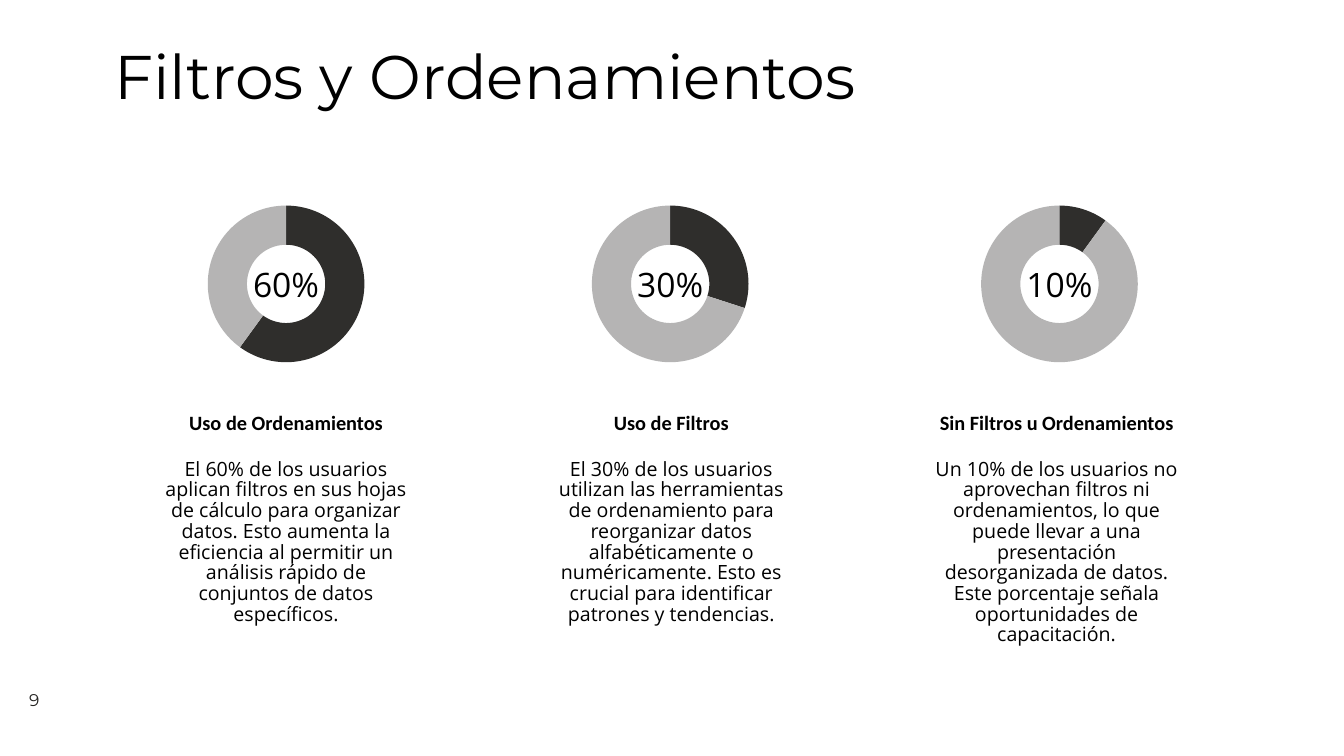
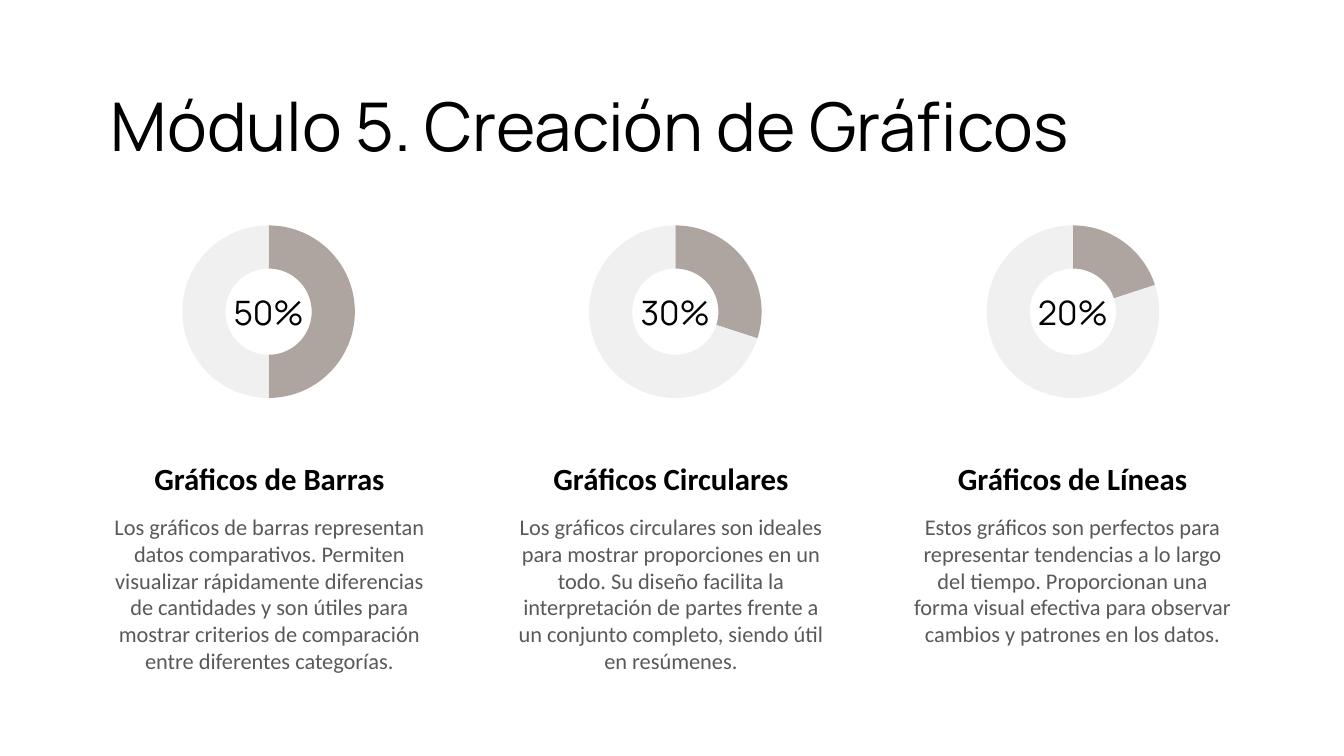
from pptx import Presentation
from pptx.chart.data import CategoryChartData
from pptx.dml.color import RGBColor
from pptx.enum import chart as chart_enum, text
from pptx.util import Cm, Pt

BLACK = RGBColor(0x00, 0x00, 0x00)
CHARCOAL = RGBColor(0x23, 0x22, 0x20)
DARK = RGBColor(0x2F, 0x2E, 0x2C)
SILVER = RGBColor(0xB5, 0xB4, 0xB4)
TAUPE = RGBColor(0xAF, 0xA5, 0xA0)
PALE = RGBColor(0xF0, 0xF0, 0xF0)
GRAY = RGBColor(0x59, 0x59, 0x59)
OUTLINE = RGBColor(0xF9, 0xF9, 0xF9)

TITLE_ONLY = 5
PERCENT_SIZE = (2.54, 1.27)

# Lengths are centimetres; a box is (left, top, width, height).
# A font is (name, points, colour, bold).
SLIDES = [
    {
        "title": "Filtros y Ordenamientos",
        "title_box": (2.62, 0.84, 28.6, 2.36),
        "title_font": ("Montserrat", 44, BLACK, False),
        "number": "9",
        "ring_colors": (DARK, SILVER),
        "ring_centres": (7.21, 16.89, 26.7),
        "ring_top": 4.83,
        "ring_size": (5.69, 4.65),
        "percent_font": ("Open Sans", 24, BLACK, False),
        "first_centre": 7.21,
        "column_step": 9.71,
        "column_width": 6.63,
        "heading_top": 9.78,
        "heading_height": 1.3,
        "heading_font": ("Calibri", 14.5, BLACK, True),
        "body_top": 11.46,
        "body_height": 6.63,
        "body_font": ("Open Sans", 14, BLACK, False),
        "body_spacing": 0.88,
        "columns": [
            (60, "Uso de Ordenamientos",
             "El 60% de los usuarios aplican filtros en sus hojas de cálculo "
             "para organizar datos. Esto aumenta la eficiencia al permitir un "
             "análisis rápido de conjuntos de datos específicos."),
            (30, "Uso de Filtros",
             "El 30% de los usuarios utilizan las herramientas de "
             "ordenamiento para reorganizar datos alfabéticamente o "
             "numéricamente. Esto es crucial para identificar patrones y "
             "tendencias."),
            (10, "Sin Filtros u Ordenamientos",
             "Un 10% de los usuarios no aprovechan filtros ni ordenamientos, "
             "lo que puede llevar a una presentación desorganizada de datos. "
             "Este porcentaje señala oportunidades de capacitación."),
        ],
    },
    {
        "title": "Módulo 5. Creación de Gráficos",
        "title_box": (2.54, 2.01, 29.01, 2.31),
        "title_font": ("Manrope", 48, BLACK, False),
        "number": None,
        "ring_colors": (TAUPE, PALE),
        "ring_centres": (6.77, 17.02, 27.04),
        "ring_top": 5.33,
        "ring_size": (5.05, 5.05),
        "percent_font": ("Manrope", 24, BLACK, False),
        "first_centre": 6.79,
        "column_step": 10.12,
        "column_width": 8.51,
        "heading_top": 10.59,
        "heading_height": 2.06,
        "heading_font": ("Calibri", 22, BLACK, True),
        "body_top": 12.8,
        "body_height": 3.66,
        "body_font": ("Calibri", 16, GRAY, False),
        "body_spacing": 1.0,
        "columns": [
            (50, "Gráficos de Barras",
             "Los gráficos de barras representan datos comparativos. Permiten "
             "visualizar rápidamente diferencias de cantidades y son útiles "
             "para mostrar criterios de comparación entre diferentes "
             "categorías."),
            (30, "Gráficos Circulares",
             "Los gráficos circulares son ideales para mostrar proporciones "
             "en un todo. Su diseño facilita la interpretación de partes "
             "frente a un conjunto completo, siendo útil en resúmenes."),
            (20, "Gráficos de Líneas",
             "Estos gráficos son perfectos para representar tendencias a lo "
             "largo del tiempo. Proporcionan una forma visual efectiva para "
             "observar cambios y patrones en los datos."),
        ],
    },
]


def set_font(font, style):
    name, size, color, bold = style
    font.name = name
    font.size = Pt(size)
    font.bold = bold
    font.color.rgb = color


def fill_text(shape, content, style, anchor=text.MSO_ANCHOR.TOP,
              align=text.PP_ALIGN.CENTER, spacing=1.0):
    frame = shape.text_frame
    frame.text = content
    frame.word_wrap = True
    frame.auto_size = text.MSO_AUTO_SIZE.NONE
    frame.vertical_anchor = anchor
    paragraph = frame.paragraphs[0]
    paragraph.alignment = align
    paragraph.line_spacing = spacing
    set_font(paragraph.runs[0].font, style)


def add_text(slide, box, content, style, **options):
    shape = slide.shapes.add_textbox(*map(Cm, box))
    fill_text(shape, content, style, **options)


def add_title(slide, design):
    title = slide.shapes.title
    title.left, title.top, title.width, title.height = map(
        Cm, design["title_box"])
    fill_text(title, design["title"], design["title_font"],
              align=text.PP_ALIGN.LEFT)


def centred_box(centre, top, width, height):
    return centre - width / 2, top, width, height


def add_ring(slide, box, share, colors):
    """Add a doughnut whose first slice is the given percentage."""
    data = CategoryChartData()
    data.categories = ["1", "2"]
    data.add_series("Series 1", (share, 100 - share))
    chart = slide.shapes.add_chart(
        chart_enum.XL_CHART_TYPE.DOUGHNUT, *map(Cm, box), data).chart
    chart.has_legend = False
    chart.has_title = False
    set_font(chart.font, ("Calibri", 10, BLACK, False))
    plot = chart.plots[0]
    plot.vary_by_categories = True
    for hole in chart.element.xpath(".//c:holeSize"):
        hole.set("val", "90")
    series = plot.series[0]
    series.format.line.color.rgb = OUTLINE
    series.format.line.width = Pt(0.75)
    for index, color in enumerate(colors):
        fill = series.points[index].format.fill
        fill.solid()
        fill.fore_color.rgb = color


def add_column(slide, design, index):
    share, heading, body = design["columns"][index]
    ring_centre = design["ring_centres"][index]
    ring_top, ring_size = design["ring_top"], design["ring_size"]
    add_ring(slide, centred_box(ring_centre, ring_top, *ring_size), share,
             design["ring_colors"])
    percent_top = ring_top + (ring_size[1] - PERCENT_SIZE[1]) / 2
    add_text(slide, centred_box(ring_centre, percent_top, *PERCENT_SIZE),
             f"{share}%", design["percent_font"],
             anchor=text.MSO_ANCHOR.MIDDLE)

    centre = design["first_centre"] + index * design["column_step"]
    width = design["column_width"]
    add_text(slide, centred_box(centre, design["heading_top"], width,
                                design["heading_height"]),
             heading, design["heading_font"], anchor=text.MSO_ANCHOR.BOTTOM)
    add_text(slide, centred_box(centre, design["body_top"], width,
                                design["body_height"]),
             body, design["body_font"], spacing=design["body_spacing"])


def main():
    presentation = Presentation()
    presentation.slide_width = Cm(33.87)
    presentation.slide_height = Cm(19.05)
    for design in SLIDES:
        slide = presentation.slides.add_slide(
            presentation.slide_layouts[TITLE_ONLY])
        add_title(slide, design)
        for index in range(len(design["columns"])):
            add_column(slide, design, index)
        if design["number"]:
            add_text(slide, (0, 17.15, 1.73, 0.99), design["number"],
                     ("Montserrat", 12.1, CHARCOAL, False),
                     anchor=text.MSO_ANCHOR.MIDDLE)
    presentation.save("out.pptx")


if __name__ == "__main__":
    main()
